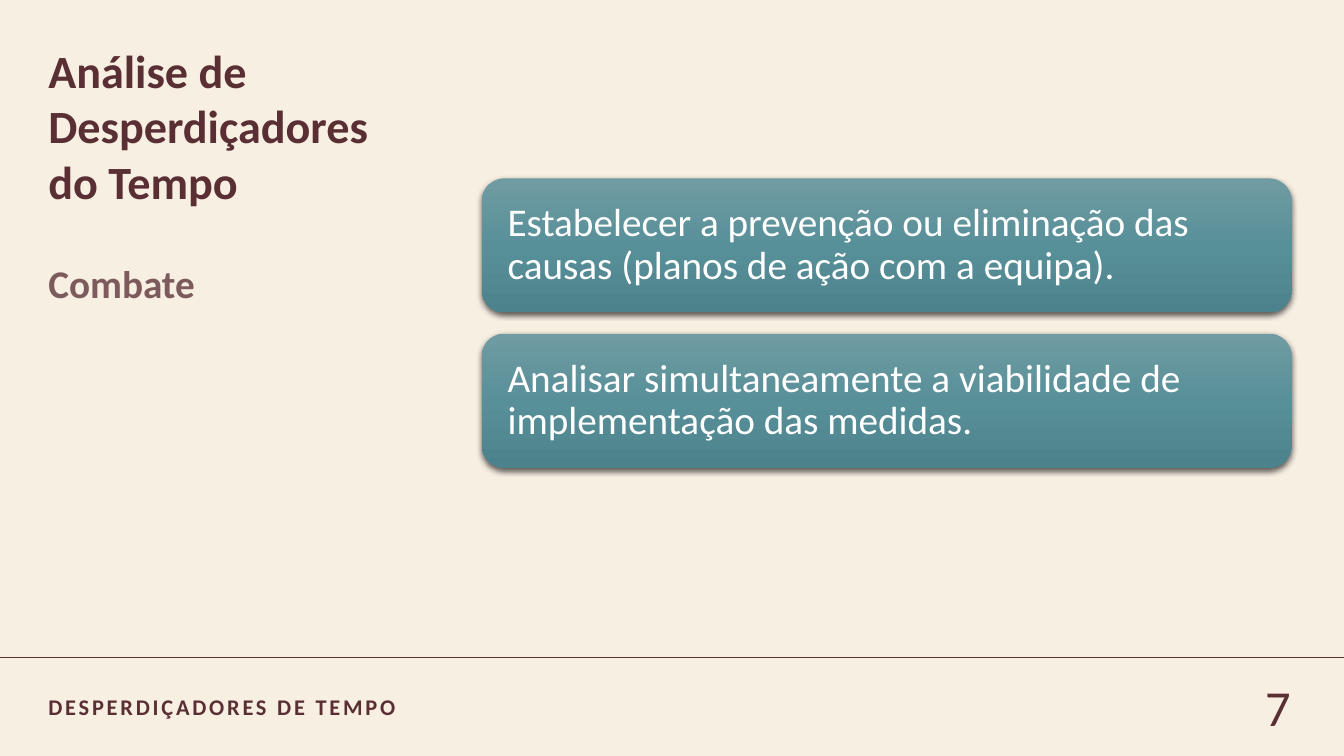
from copy import deepcopy

from lxml import etree
from pptx import Presentation
from pptx import util as u
from pptx.dml.color import RGBColor
from pptx.enum import shapes, text
from pptx.oxml.ns import qn

COLORS = {"paper": "F8EFE3", "wine": "592F34", "white": "FFFFFF", "shadow": "000000",
          "teal_light": "709BA2", "teal": "589099", "teal_dark": "4C828B"}
CARD_STOPS = {0: "teal_light", 0.5: "teal", 1: "teal_dark"}
MEASURES = [
    "Estabelecer a prevenção ou eliminação das causas (planos de ação com a equipa).",
    "Analisar simultaneamente a viabilidade de implementação das medidas.",
]


def color(name):
    return RGBColor.from_string(COLORS[name])


def apply(target, values):
    for key, value in values.items():
        setattr(target, key, value)


class SlideBuilder:
    font = "Calibri"

    def __init__(self, deck):
        self.slide = deck.slides.add_slide(deck.slide_layouts[1])
        background = self.slide.background.fill
        background.solid()
        background.fore_color.rgb = color("paper")

    def set_text(self, shape, content, size, ink="wine", bold=False, anchor="TOP",
                 insets=(0, 0), **paragraph_format):
        frame = shape.text_frame
        side, edge = map(u.Inches, insets)
        apply(frame, {"word_wrap": True, "auto_size": text.MSO_AUTO_SIZE.NONE,
                      "vertical_anchor": text.MSO_ANCHOR[anchor],
                      "margin_left": side, "margin_right": side,
                      "margin_top": edge, "margin_bottom": edge})
        paragraph = frame.paragraphs[0]
        paragraph.text = content
        apply(paragraph, {"alignment": text.PP_ALIGN.LEFT, "space_before": u.Pt(0),
                          **paragraph_format})
        for run in paragraph.runs:
            apply(run.font, {"name": self.font, "size": u.Pt(size), "bold": bold})
            run.font.color.rgb = color(ink)
        return paragraph

    def placeholder(self, index, box, content, size, **style):
        holder = self.slide.placeholders[index]
        apply(holder, dict(zip(("left", "top", "width", "height"), map(u.Inches, box))))
        return self.set_text(holder, content, size, bold=True, **style)

    def subtitle(self, box, content, size):
        paragraph = self.placeholder(1, box, content, size, line_spacing=1.2,
                                     space_after=u.Pt(6))
        properties = paragraph._p.get_or_add_pPr()
        properties.set("marL", "0")
        properties.set("indent", "0")
        etree.SubElement(properties, qn("a:buNone"))
        ink = paragraph.runs[0]._r.find(".//" + qn("a:srgbClr"))
        etree.SubElement(ink, qn("a:alpha"), val="77000")

    def label(self, box, content, size, spacing=0, **style):
        holder = self.slide.shapes.add_textbox(*map(u.Inches, box))
        paragraph = self.set_text(holder, content, size, anchor="MIDDLE",
                                  insets=(0, 0.08), space_after=u.Pt(6), **style)
        paragraph.runs[0]._r.get_or_add_rPr().set("spc", str(spacing * 100))

    def rule(self, y, width):
        line = self.slide.shapes.add_connector(
            shapes.MSO_CONNECTOR.STRAIGHT, 0, u.Inches(y), u.Inches(width), u.Inches(y))
        line.line.color.rgb = color("wine")
        line.line.width = u.Pt(0.75)
        etree.SubElement(line._element.spPr, qn("a:effectLst"))

    def card(self, box, content):
        card = self.slide.shapes.add_shape(
            shapes.MSO_SHAPE.ROUNDED_RECTANGLE, *map(u.Inches, box))
        card.line.fill.background()
        card.shadow.inherit = False
        card.fill.gradient()
        properties = card._element.spPr
        stops = properties.find(".//" + qn("a:gsLst"))
        stops.append(deepcopy(stops[0]))
        for stop, (position, name) in zip(card.fill.gradient_stops, CARD_STOPS.items()):
            stop.position = position
            stop.color.rgb = color(name)
        card.fill.gradient_angle = 270
        shadow = etree.SubElement(
            properties.find(qn("a:effectLst")), qn("a:outerShdw"),
            blurRad=str(u.Pt(4.5)), dist=str(u.Pt(1.5)), dir="5400000", rotWithShape="0")
        shade = etree.SubElement(shadow, qn("a:srgbClr"), val=COLORS["shadow"])
        etree.SubElement(shade, qn("a:alpha"), val="63000")
        self.set_text(card, content, 28, "white", anchor="MIDDLE", insets=(0.19, 0.19),
                      line_spacing=0.9)


def main():
    deck = Presentation()
    deck.slide_width, deck.slide_height = u.Inches(13.33), u.Inches(7.5)
    page = SlideBuilder(deck)
    left, column, footer_top, footer_height = 0.48, 3.78, 6.52, 0.98
    page.rule(footer_top, 13.33)
    page.placeholder(0, (left, 0.42, column, 1.5),
                     "Análise de \vDesperdiçadores \vdo Tempo", 33)
    page.subtitle((left, 2.48, column, 3.47), "Combate", 28)
    page.label((left, footer_top, column, footer_height), "DESPERDIÇADORES DE TEMPO", 16,
               spacing=2, bold=True)
    page.label((11.19, footer_top, 1.61, footer_height), "7", 36,
               alignment=text.PP_ALIGN.RIGHT)
    for row, measure in enumerate(MEASURES):
        page.card((4.78, 1.77 + row * 1.54, 8.03, 1.33), measure)
    deck.save("out.pptx")


if __name__ == "__main__":
    main()
